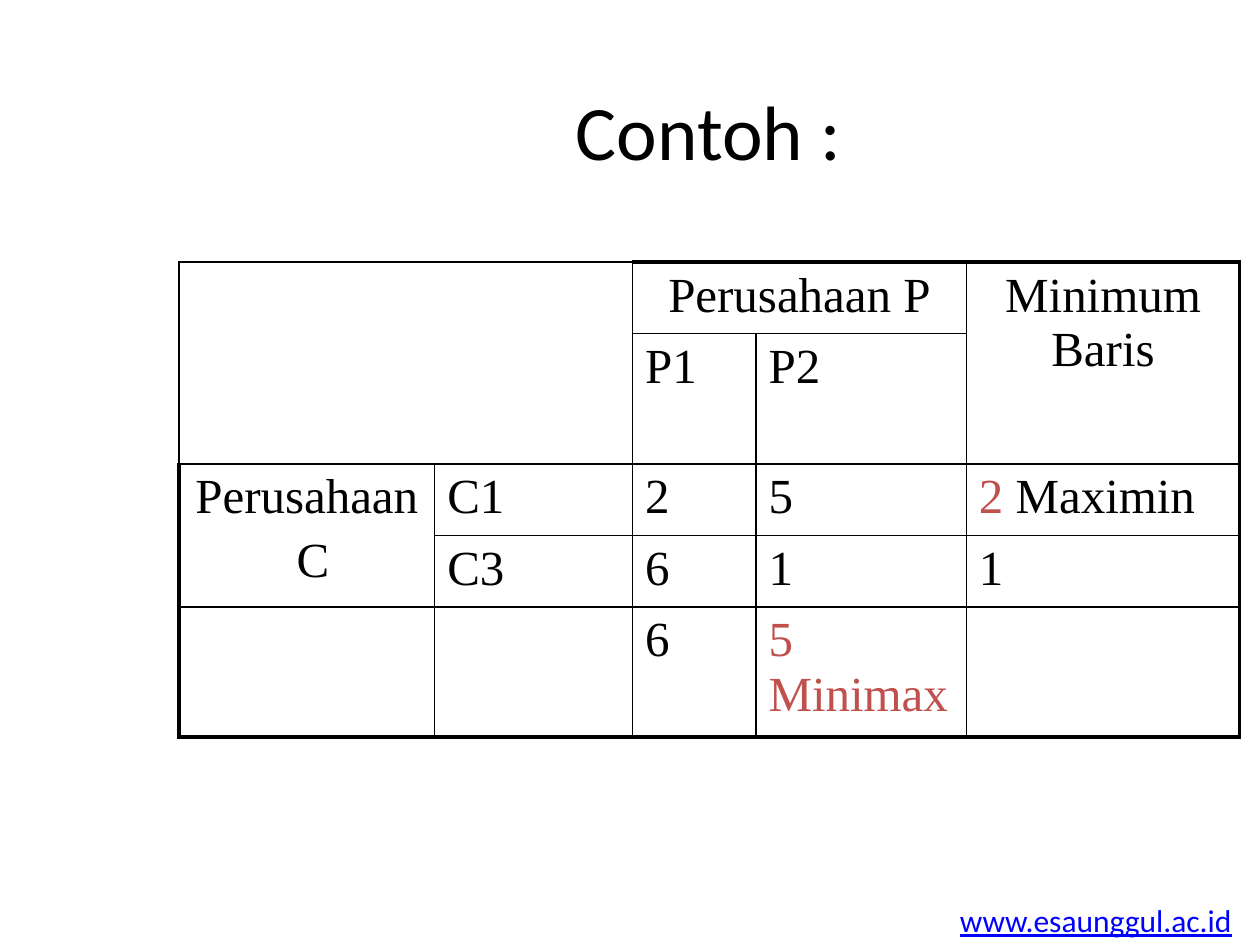
from lxml.etree import SubElement
from pptx import Presentation
from pptx.dml.color import RGBColor
from pptx.enum.text import MSO_ANCHOR, PP_ALIGN
from pptx.oxml import parse_xml
from pptx.oxml.ns import nsdecls, qn
from pptx.util import Inches, Pt

BLACK = RGBColor(0x00, 0x00, 0x00)
RED = RGBColor(0xC0, 0x50, 0x4D)
BLUE = RGBColor(0x00, 0x00, 0xFF)

TITLE = "Contoh :"
WEBSITE = "www.esaunggul.ac.id"

COLUMNS = [2.03, 1.57, 0.98, 1.67, 2.17]
ROWS = [0.53, 0.96, 0.53, 0.53, 0.96]
# Each entry lists paragraphs; each paragraph lists (text, colour) runs.
CELLS = {
    (0, 2): [[("Perusahaan P", BLACK)]],
    (0, 4): [[("Minimum Baris", BLACK)]],
    (1, 2): [[("P1", BLACK)]],
    (1, 3): [[("P2", BLACK)]],
    (2, 0): [[("Perusahaan", BLACK)], [(" C", BLACK)]],
    (2, 1): [[("C1", BLACK)]],
    (2, 2): [[("2", BLACK)]],
    (2, 3): [[("5", BLACK)]],
    (2, 4): [[("2", RED), (" Maximin", BLACK)]],
    (3, 1): [[("C3", BLACK)]],
    (3, 2): [[("6", BLACK)]],
    (3, 3): [[("1", BLACK)]],
    (3, 4): [[("1", BLACK)]],
    (4, 2): [[("6", BLACK)]],
    (4, 3): [[("5 Minimax", RED)]],
}
MERGES = [((0, 2), (0, 3)), ((0, 4), (1, 4)), ((2, 0), (3, 0))]
# Cells that share a letter have no line between them; "." is the open corner.
REGIONS = ["..aab",
           "..cdb",
           "efghi",
           "ejklm",
           "nopqr"]


def region(row, column):
    inside = 0 <= row < len(ROWS) and 0 <= column < len(COLUMNS)
    return REGIONS[row][column] if inside else None


def line_width(own, neighbour):
    """Thick on the outer frame, thin inside, none within a region."""
    if own == neighbour:
        return 0
    return 2.25 if neighbour is None and own != "." else 1


def draw_borders(cell, row, column):
    own = region(row, column)
    neighbours = {
        "lnL": region(row, column - 1),
        "lnR": region(row, column + cell.span_width),
        "lnT": region(row - 1, column),
        "lnB": region(row + cell.span_height, column),
    }
    properties = cell._tc.get_or_add_tcPr()
    for position, (tag, neighbour) in enumerate(neighbours.items()):
        width = line_width(own, neighbour)
        line = parse_xml(f'<a:{tag} {nsdecls("a")} w="{Pt(width)}"/>')
        if width:
            fill = SubElement(line, qn("a:solidFill"))
            SubElement(fill, qn("a:srgbClr"), val=str(BLACK))
        else:
            SubElement(line, qn("a:noFill"))
        properties.insert(position, line)


def write_cell(cell, paragraphs, centred):
    frame = cell.text_frame
    for index, runs in enumerate(paragraphs):
        para = frame.add_paragraph() if index else frame.paragraphs[0]
        para.alignment = PP_ALIGN.CENTER if centred else PP_ALIGN.LEFT
        if index:
            para.space_before = Pt(5.6)
        para.font.name, para.font.size = "Times New Roman", Pt(28)
        for text, colour in runs:
            span = para.add_run()
            span.text = text
            span.font.color.rgb = colour


def add_text(page, text, area, size, colour, align, wrap, underline=False):
    box = page.shapes.add_textbox(*map(Inches, area))
    box.text_frame.word_wrap = wrap
    box.text_frame.vertical_anchor = MSO_ANCHOR.TOP
    para = box.text_frame.paragraphs[0]
    para.text = text
    para.alignment = align
    font = para.font
    font.name, font.size, font.underline = "Calibri", Pt(size), underline
    font.color.rgb = colour
    return box


def add_payoff_table(page):
    frame = page.shapes.add_table(
        len(ROWS), len(COLUMNS), Inches(1.42), Inches(2.08),
        Inches(sum(COLUMNS)), Inches(sum(ROWS)))
    table = frame.table
    table.first_row = table.horz_banding = False
    for column, width in zip(table.columns, COLUMNS):
        column.width = Inches(width)
    for row, height in zip(table.rows, ROWS):
        row.height = Inches(height)
    for first, last in MERGES:
        table.cell(*first).merge(table.cell(*last))
    for row in range(len(ROWS)):
        for column in range(len(COLUMNS)):
            cell = table.cell(row, column)
            cell.fill.background()
            draw_borders(cell, row, column)
            if (row, column) in CELLS:
                write_cell(cell, CELLS[row, column], cell.is_merge_origin)


def main():
    deck = Presentation()
    deck.slide_width, deck.slide_height = Inches(10), Inches(7.5)
    page = deck.slides.add_slide(deck.slide_layouts[6])
    add_text(page, WEBSITE, (7.52, 7.1, 2.38, 0.4), 18, BLUE,
             PP_ALIGN.LEFT, wrap=False, underline=True)
    title = add_text(page, TITLE, (1.5, 0.58, 8.25, 1.25), 44, BLACK,
                     PP_ALIGN.CENTER, wrap=True)
    title.text_frame.margin_top = Inches(0.08)
    add_payoff_table(page)
    deck.save("out.pptx")


if __name__ == "__main__":
    main()
